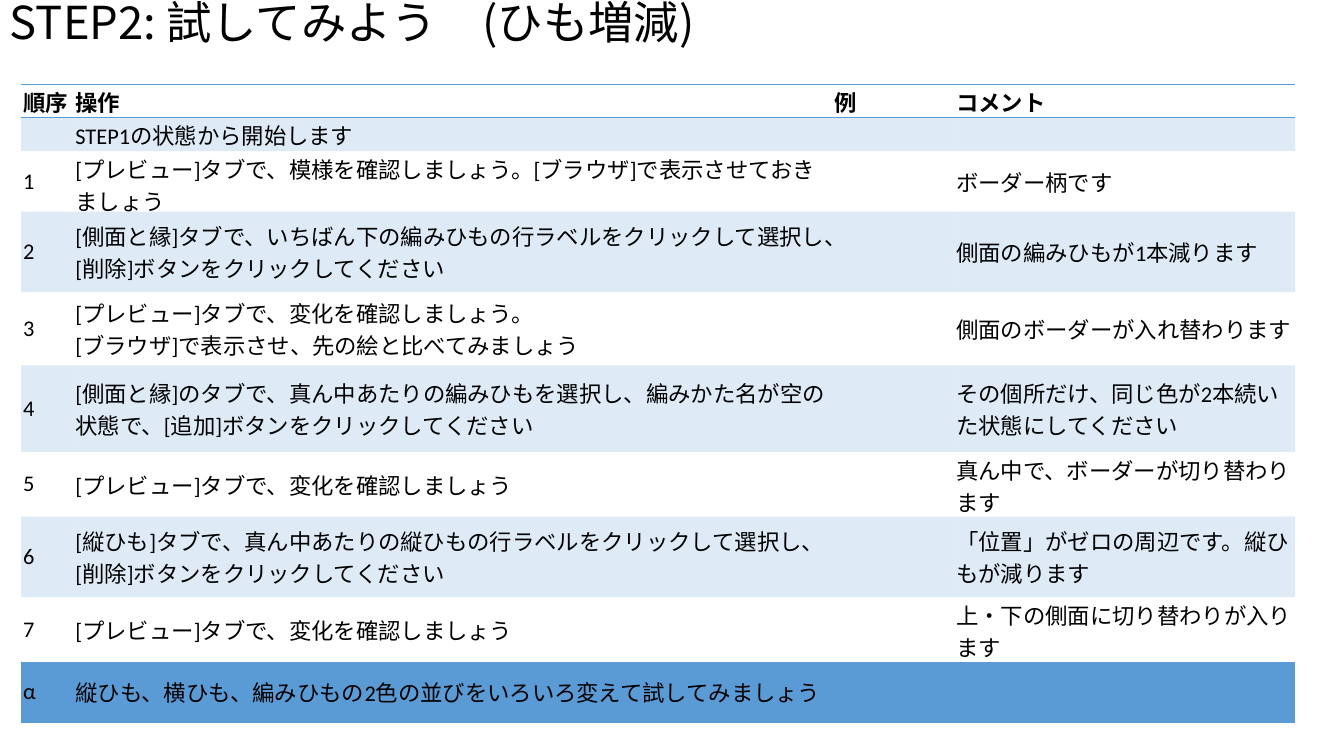
import pptx
import pptx.util
import pptx.dml.color
import pptx.enum.text
import pptx.oxml.ns
import lxml.etree
from dataclasses import dataclass

Cm = pptx.util.Cm
Pt = pptx.util.Pt
qn = pptx.oxml.ns.qn


@dataclass
class Theme:
    ink: str = "000000"
    accent: str = "5B9BD5"
    band_alpha: int = 20
    title_font: str = "Noto Sans CJK JP"
    body_font: str = "Calibri"
    title_size: float = 32.4
    body_size: float = 16
    rule_width: float = 1
    table_style: str = "{2D5ABB26-0587-4C30-8999-92F81FD0307C}"  # no style, no grid


class Deck:
    def __init__(self, theme):
        self.theme = theme
        self.prs = pptx.Presentation()
        self.prs.slide_width, self.prs.slide_height = Cm(33.87), Cm(19.05)
        self.s = self.prs.slides.add_slide(self.prs.slide_layouts[6])

    def style(self, p, font, size, bold=False):
        p.font.name, p.font.size, p.font.bold = font, Pt(size), bold
        p.font.color.rgb = pptx.dml.color.RGBColor.from_string(self.theme.ink)

    def title(self, text, left, top, width, height):
        tf = self.s.shapes.add_textbox(Cm(left), Cm(top), Cm(width), Cm(height)).text_frame
        tf.word_wrap = True
        tf.vertical_anchor = pptx.enum.text.MSO_ANCHOR.MIDDLE
        p = tf.paragraphs[0]
        p.text = text
        p.line_spacing = 0.9
        self.style(p, self.theme.title_font, self.theme.title_size)

    def rule(self, cell, side):
        ln = lxml.etree.SubElement(cell._tc.get_or_add_tcPr(), qn("a:ln" + side),
                                   w=str(Pt(self.theme.rule_width)))
        fill = lxml.etree.SubElement(ln, qn("a:solidFill"))
        lxml.etree.SubElement(fill, qn("a:srgbClr"), val=self.theme.accent)

    def band(self, cell):
        cell.fill.solid()
        cell.fill.fore_color.rgb = pptx.dml.color.RGBColor.from_string(self.theme.accent)
        color = cell._tc.tcPr.find(".//" + qn("a:srgbClr"))
        lxml.etree.SubElement(color, qn("a:alpha"), val=str(self.theme.band_alpha * 1000))

    def cell(self, cell, text, bold):
        cell.margin_left = cell.margin_right = Cm(0.05)
        cell.margin_top = cell.margin_bottom = Cm(0.03)
        cell.vertical_anchor = pptx.enum.text.MSO_ANCHOR.MIDDLE
        p = cell.text_frame.paragraphs[0]
        p.text = text
        self.style(p, self.theme.body_font, self.theme.body_size, bold)

    def table(self, rows, left, top, widths, heights):
        frame = self.s.shapes.add_table(len(rows), len(widths), Cm(left), Cm(top),
                                        Cm(sum(widths)), Cm(sum(heights)))
        table = frame.table
        table.first_row = table.horz_banding = False
        table._tbl.tblPr.find(qn("a:tableStyleId")).text = self.theme.table_style
        for column, width in zip(table.columns, widths):
            column.width = Cm(width)
        for i, (row, height) in enumerate(zip(rows, heights)):
            table.rows[i].height = Cm(height)
            for j, text in enumerate(row):
                cell = table.cell(i, j)
                self.cell(cell, text, bold=i == 0)
                # Rules frame the header and close the table
                if i == 0:
                    self.rule(cell, "T")
                if i in (0, len(rows) - 1):
                    self.rule(cell, "B")
                # Every second row is tinted
                if i % 2:
                    self.band(cell)


STEPS = [
    ("順序", "操作", "例", "コメント"),
    ("", "STEP1の状態から開始します", "", ""),
    ("1", "[プレビュー]タブで、模様を確認しましょう。[ブラウザ]で表示させておきましょう",
     "", "ボーダー柄です"),
    ("2", "[側面と縁]タブで、いちばん下の編みひもの行ラベルをクリックして選択し、"
     "[削除]ボタンをクリックしてください", "", "側面の編みひもが1本減ります"),
    ("3", "[プレビュー]タブで、変化を確認しましょう。\v"
     "[ブラウザ]で表示させ、先の絵と比べてみましょう", "", "側面のボーダーが入れ替わります"),
    ("4", "[側面と縁]のタブで、真ん中あたりの編みひもを選択し、編みかた名が空の状態で、"
     "[追加]ボタンをクリックしてください", "", "その個所だけ、同じ色が2本続いた状態にしてください"),
    ("5", "[プレビュー]タブで、変化を確認しましょう", "", "真ん中で、ボーダーが切り替わります"),
    ("6", "[縦ひも]タブで、真ん中あたりの縦ひもの行ラベルをクリックして選択し、"
     "[削除]ボタンをクリックしてください", "", "「位置」がゼロの周辺です。縦ひもが減ります"),
    ("7", "[プレビュー]タブで、変化を確認しましょう", "", "上・下の側面に切り替わりが入ります"),
    ("α", "縦ひも、横ひも、編みひもの2色の並びをいろいろ変えて試してみましょう", "", ""),
]


def main():
    deck = Deck(Theme())
    # Heading
    deck.title("STEP2: 試してみよう　(ひも増減)", 0, 0, 29.21, 1.27)
    # Table of steps
    deck.table(STEPS, 0.53, 2.13, widths=[1.32, 19.13, 3.07, 8.59],
               heights=[0.84, 0.84, 1.52, 2.03, 1.85, 2.18, 1.63, 2.03, 1.63, 1.52])
    deck.prs.save("out.pptx")


if __name__ == "__main__":
    main()
